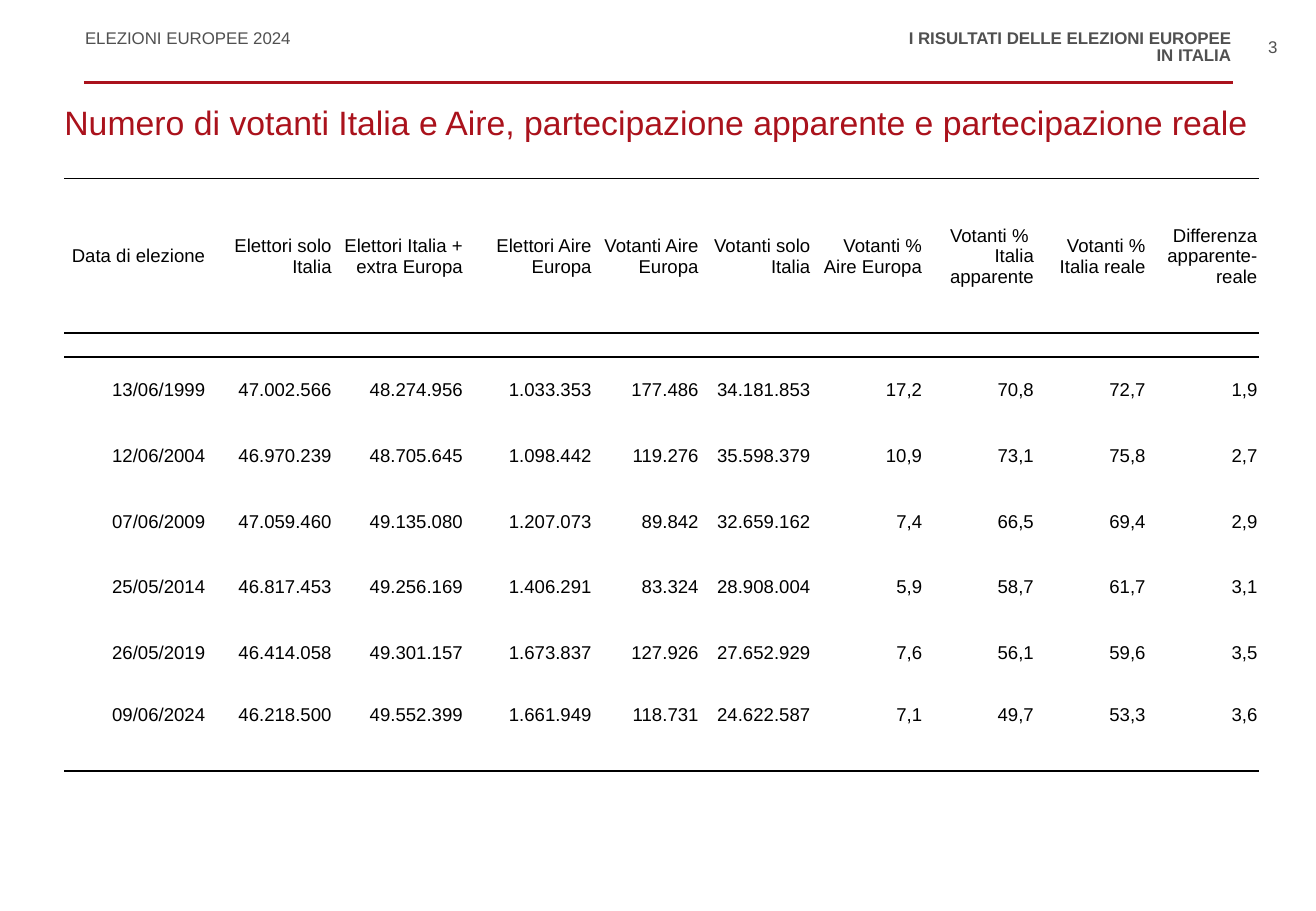
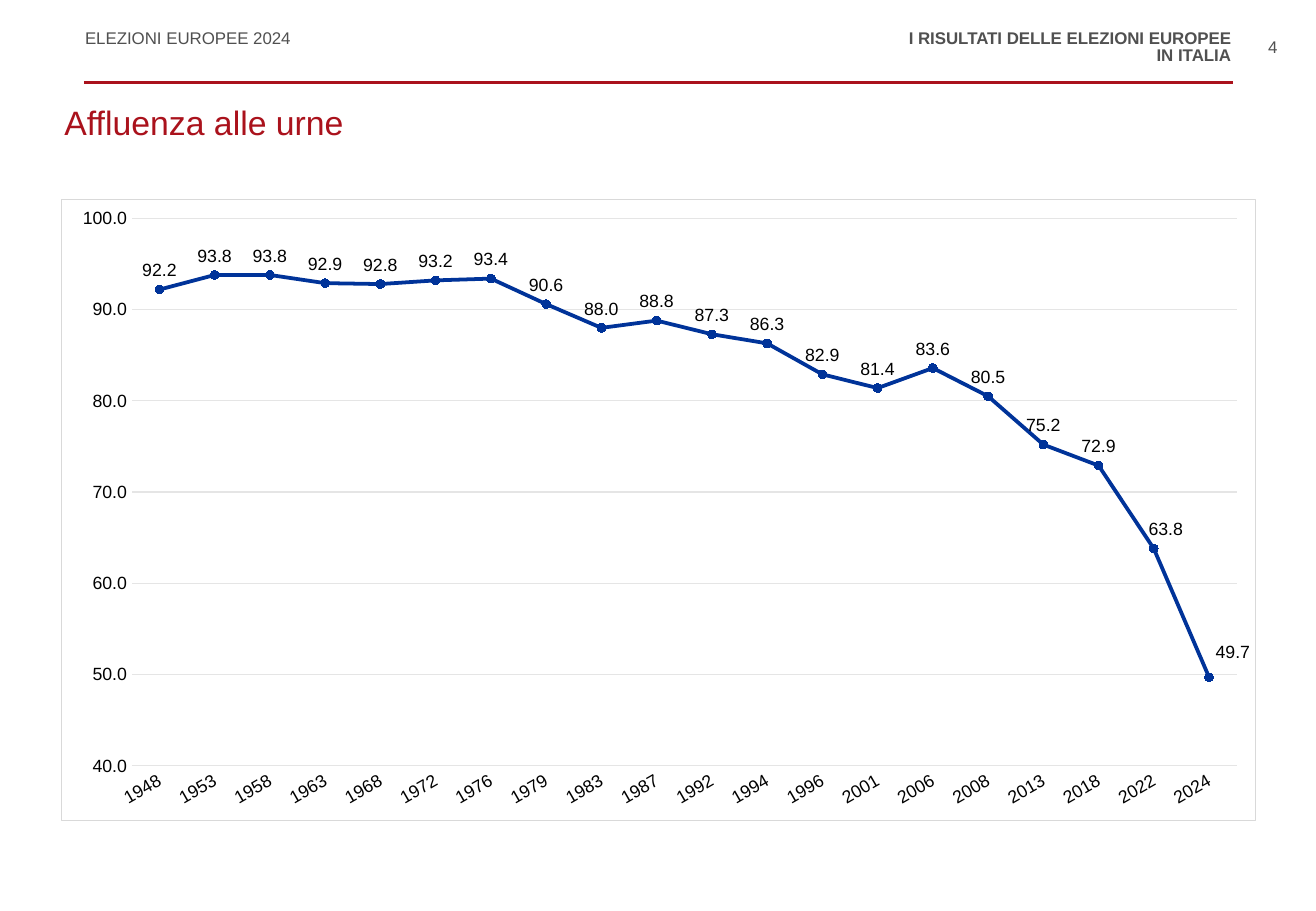
import pptx
import pptx.chart.data
import pptx.dml.color
import pptx.enum.chart
import pptx.enum.shapes
import pptx.enum.text
import pptx.oxml
import pptx.oxml.ns
import pptx.util
from lxml import etree

PX = 9144  # EMU in one px, 100 px to the inch
FONT = "Arial"
COLORS = {
    "accent": "AA121C",
    "muted": "505050",
    "text": "000000",
    "background": "FFFFFF",
    "grid": "E5E5E5",
    "frame": "D9D9D9",
    "series": "003399",
}
ALIGN = pptx.enum.text.PP_ALIGN
qn = pptx.oxml.ns.qn

TITLE_BOX = (53, 89, 984, 57)
TABLE_BOX = (53, 147, 983, 488)
CHART_BOX = (50, 164, 984, 512)

COLUMN_WIDTHS = [117, 104, 108, 106, 88] + [92] * 5
ROW_HEIGHTS = [127, 20] + [54] * 5 + [48, 23]
HEADERS = [
    "Data di elezione", "Elettori solo Italia", "Elettori Italia + extra Europa",
    "Elettori Aire Europa", "Votanti Aire Europa", "Votanti solo Italia",
    "Votanti % Aire Europa", "Votanti % \nItalia apparente",
    "Votanti % Italia reale", "Differenza apparente-reale",
]
ELECTIONS = [
    ["13/06/1999", "47.002.566", "48.274.956", "1.033.353", "177.486", "34.181.853", "17,2", "70,8", "72,7", "1,9"],
    ["12/06/2004", "46.970.239", "48.705.645", "1.098.442", "119.276", "35.598.379", "10,9", "73,1", "75,8", "2,7"],
    ["07/06/2009", "47.059.460", "49.135.080", "1.207.073", "89.842", "32.659.162", "7,4", "66,5", "69,4", "2,9"],
    ["25/05/2014", "46.817.453", "49.256.169", "1.406.291", "83.324", "28.908.004", "5,9", "58,7", "61,7", "3,1"],
    ["26/05/2019", "46.414.058", "49.301.157", "1.673.837", "127.926", "27.652.929", "7,6", "56,1", "59,6", "3,5"],
    ["09/06/2024", "46.218.500", "49.552.399", "1.661.949", "118.731", "24.622.587", "7,1", "49,7", "53,3", "3,6"],
]
TURNOUT = {
    "1948": 92.2, "1953": 93.8, "1958": 93.8, "1963": 92.9, "1968": 92.8,
    "1972": 93.2, "1976": 93.4, "1979": 90.6, "1983": 88.0, "1987": 88.8,
    "1992": 87.3, "1994": 86.3, "1996": 82.9, "2001": 81.4, "2006": 83.6,
    "2008": 80.5, "2013": 75.2, "2018": 72.9, "2022": 63.8, "2024": 49.7,
}
# Labels moved off the steep end of the line: point index to (x, y) shift
LABEL_SHIFTS = {18: (0.01, 0), 19: (0.02, -0.01)}


def emu(*lengths):
    return [pptx.util.Emu(length * PX) for length in lengths]


def color(name):
    return pptx.dml.color.RGBColor.from_string(COLORS[name])


def style_font(font, size, color_name, bold=False):
    font.name = FONT
    font.size = pptx.util.Pt(size)
    font.bold = bold
    font.color.rgb = color(color_name)


def style_line(line, color_name, width):
    line.color.rgb = color(color_name)
    line.width = pptx.util.Pt(width)


def add_text(slide, box, lines, size, color_name, align=ALIGN.LEFT,
             bold=False, spacing=0.85, margin=0, wrap=True):
    frame = slide.shapes.add_textbox(*emu(*box)).text_frame
    frame.word_wrap = wrap
    frame.margin_left, frame.margin_top, frame.margin_right, frame.margin_bottom = emu(*[margin] * 4)
    for index, text in enumerate(lines):
        paragraph = frame.add_paragraph() if index else frame.paragraphs[0]
        paragraph.alignment = align
        paragraph.line_spacing = spacing
        run = paragraph.add_run()
        run.text = text
        style_font(run.font, size, color_name, bold)


# Header band, rule, page number and title shared by all slides
def add_page(presentation, title, number):
    slide = presentation.slides.add_slide(presentation.slide_layouts[6])
    add_text(slide, (70, 25, 416, 15), ["ELEZIONI EUROPEE 2024"], 10, "muted")
    add_text(slide, (559, 25, 454, 29),
             ["I RISULTATI DELLE ELEZIONI EUROPEE", "IN ITALIA"],
             10, "muted", ALIGN.RIGHT, bold=True)
    add_text(slide, (1034, 25, 27, 25), [str(number)], 10, "muted",
             ALIGN.CENTER, spacing=1.0, margin=5, wrap=False)
    rule = slide.shapes.add_connector(
        pptx.enum.shapes.MSO_CONNECTOR.STRAIGHT, *emu(69, 68, 1015, 68))
    style_line(rule.line, "accent", 1.5)
    etree.SubElement(rule._element.spPr, qn("a:effectLst"))
    add_text(slide, TITLE_BOX, [title], 20, "accent")
    return slide


def add_border(cell, side, width):
    line = etree.SubElement(cell._tc.get_or_add_tcPr(), qn("a:" + side),
                            w=str(pptx.util.Pt(width)))
    fill = etree.SubElement(line, qn("a:solidFill"))
    etree.SubElement(fill, qn("a:srgbClr"), val=COLORS["text"])


def fill_cell(cell, text, borders):
    cell.margin_left, cell.margin_right, cell.margin_top, cell.margin_bottom = emu(1, 1, 1, 0)
    cell.vertical_anchor = pptx.enum.text.MSO_ANCHOR.MIDDLE
    for side, width in borders.items():
        add_border(cell, side, width)
    cell.fill.solid()
    cell.fill.fore_color.rgb = color("background")
    paragraph = cell.text_frame.paragraphs[0]
    paragraph.alignment = ALIGN.RIGHT
    if not text:  # keeps the spacer rows low
        etree.SubElement(paragraph._p, qn("a:endParaRPr"), sz="600")
        return
    for index, part in enumerate(text.split("\n")):
        if index:
            paragraph.add_line_break()
        run = paragraph.add_run()
        run.text = part
        style_font(run.font, 11, "text")


# Table of voters, with a spacer row under the header and one at the end
def add_voters_table(slide, box):
    spacer = [""] * len(HEADERS)
    rows = [HEADERS, spacer, *ELECTIONS, spacer]
    borders = {0: {"lnT": 0.5, "lnB": 1}, 1: {"lnT": 1}, len(rows) - 1: {"lnB": 1}}
    table = slide.shapes.add_table(len(rows), len(HEADERS), *emu(*box)).table
    table.first_row = table.horz_banding = False
    # The style without fills and grid
    table._tbl.tblPr.find(qn("a:tableStyleId")).text = "{2D5ABB26-0587-4C30-8999-92F81FD0307C}"
    for column, width in zip(table.columns, emu(*COLUMN_WIDTHS)):
        column.width = width
    for row, height in zip(table.rows, emu(*ROW_HEIGHTS)):
        row.height = height
    for row_index, texts in enumerate(rows):
        for column_index, text in enumerate(texts):
            fill_cell(table.cell(row_index, column_index), text, borders.get(row_index, {}))


def make_layout(**values):
    layout = pptx.oxml.parse_xml("<c:layout %s><c:manualLayout/></c:layout>" % pptx.oxml.ns.nsdecls("c"))
    for name, value in values.items():
        etree.SubElement(layout[0], qn("c:" + name), val=str(value))
    return layout


def place_chart(chart):
    plot_area = chart._chartSpace.chart.plotArea
    for old_layout in plot_area.findall(qn("c:layout")):
        plot_area.remove(old_layout)
    plot_area.insert(0, make_layout(layoutTarget="inner", xMode="edge", yMode="edge",
                                    x=0.059, y=0.03, w=0.925, h=0.882))
    frame = pptx.oxml.parse_xml(
        '<c:spPr %s><a:noFill/><a:ln w="9525"><a:solidFill><a:srgbClr val="%s"/>'
        "</a:solidFill></a:ln></c:spPr>" % (pptx.oxml.ns.nsdecls("c", "a"), COLORS["frame"]))
    chart._chartSpace.chart.addnext(frame)


def style_axes(chart):
    for axis in (chart.category_axis, chart.value_axis):
        axis.major_tick_mark = axis.minor_tick_mark = pptx.enum.chart.XL_TICK_MARK.NONE
        style_font(axis.tick_labels.font, 10.5, "text")
    years, percent = chart.category_axis, chart.value_axis
    style_line(years.format.line, "grid", 0.75)
    years._element.find(qn("c:txPr")).find(qn("a:bodyPr")).set("rot", "-1800000")
    percent.format.line.fill.background()
    percent.minimum_scale, percent.maximum_scale, percent.major_unit = 40, 100, 10
    percent.has_major_gridlines = True
    style_line(percent.major_gridlines.format.line, "grid", 0.75)
    percent.tick_labels.number_format = "#,##0.0"
    percent.tick_labels.number_format_is_linked = False


def style_series(series):
    series.smooth = False
    style_line(series.format.line, "series", 2.25)
    marker = series.marker
    marker.style = pptx.enum.chart.XL_MARKER_STYLE.CIRCLE
    marker.size = 5
    marker.format.fill.solid()
    marker.format.fill.fore_color.rgb = color("series")
    style_line(marker.format.line, "series", 0.75)
    above = pptx.enum.chart.XL_LABEL_POSITION.ABOVE
    labels = series.data_labels
    labels.show_value = True
    labels.number_format = "#,##0.0"
    labels.number_format_is_linked = False
    labels.position = above
    style_font(labels.font, 10.5, "text")
    for index, (x, y) in LABEL_SHIFTS.items():
        label = series.points[index].data_label
        style_font(label.font, 10.5, "text")
        label.position = above
        element = labels._element.find("%s[%d]" % (qn("c:dLbl"), list(LABEL_SHIFTS).index(index) + 1))
        element.find(qn("c:idx")).addnext(make_layout(x=x, y=y))


# Line chart of turnout by year
def add_turnout_chart(slide, box):
    data = pptx.chart.data.CategoryChartData(number_format="#,##0.0")
    data.categories = list(TURNOUT)
    data.add_series("Affluenza", list(TURNOUT.values()))
    chart = slide.shapes.add_chart(
        pptx.enum.chart.XL_CHART_TYPE.LINE_MARKERS, *emu(*box), data).chart
    chart.has_title = chart.has_legend = False
    style_font(chart.font, 10.5, "text")
    chart.plots[0].vary_by_categories = False
    place_chart(chart)
    style_axes(chart)
    style_series(chart.plots[0].series[0])


def main():
    presentation = pptx.Presentation()
    presentation.slide_width, presentation.slide_height = emu(1083, 750)
    slide = add_page(presentation, "Numero di votanti Italia e Aire, partecipazione apparente e partecipazione reale", 3)
    add_voters_table(slide, TABLE_BOX)
    slide = add_page(presentation, "Affluenza alle urne", 4)
    add_turnout_chart(slide, CHART_BOX)
    presentation.save("out.pptx")


if __name__ == "__main__":
    main()
